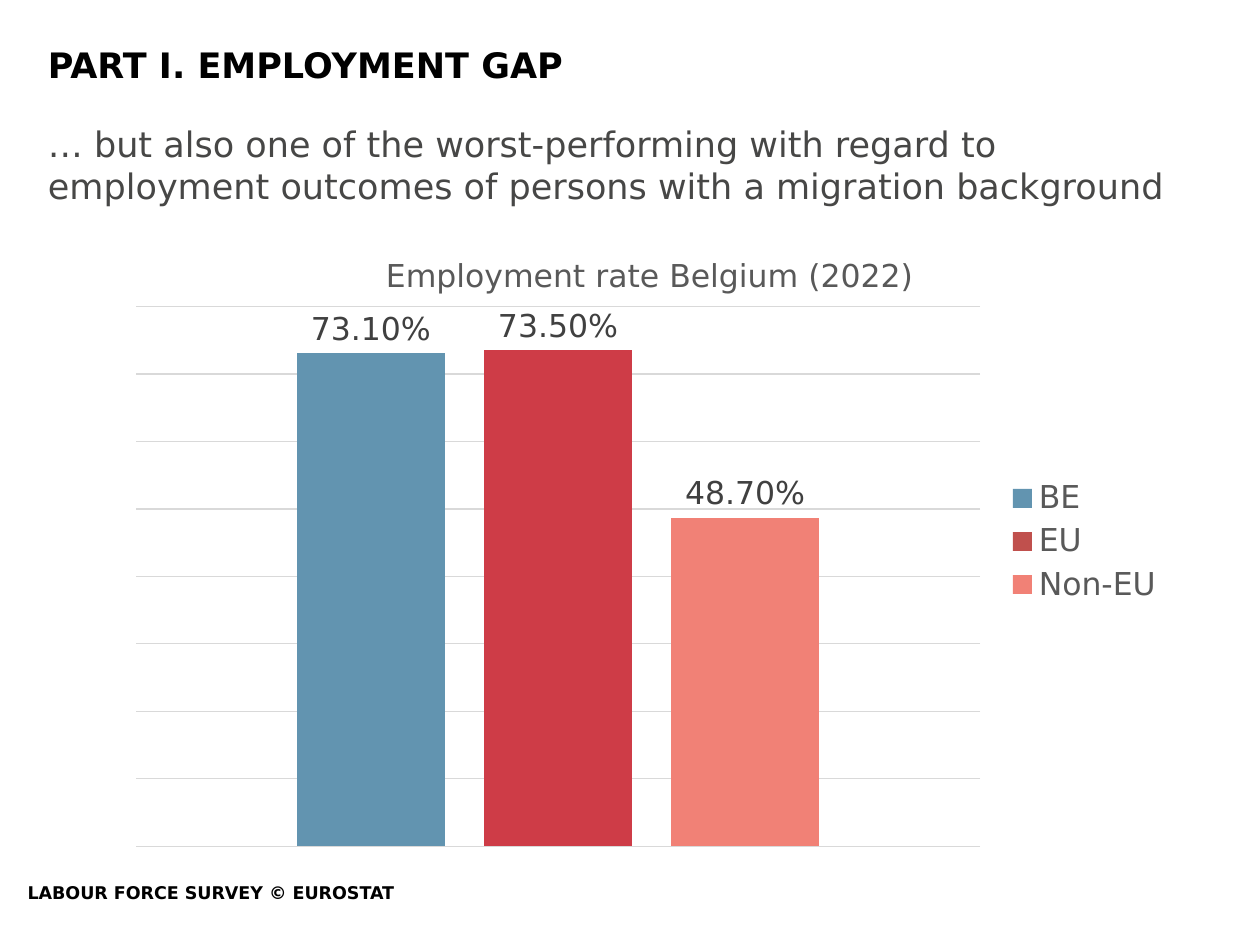
from dataclasses import dataclass

from lxml.etree import SubElement
from pptx import Presentation
from pptx.chart.data import CategoryChartData
from pptx.dml.color import RGBColor
from pptx.enum.chart import XL_CHART_TYPE as ChartType
from pptx.enum.chart import XL_LABEL_POSITION as LabelPosition
from pptx.enum.chart import XL_LEGEND_POSITION as LegendPosition
from pptx.enum.text import MSO_ANCHOR as Anchor
from pptx.enum.text import MSO_AUTO_SIZE as AutoSize
from pptx.enum.text import PP_ALIGN as Align
from pptx.oxml import parse_xml
from pptx.oxml.ns import nsdecls, qn
from pptx.util import Inches, Pt

WIDTH, HEIGHT = Inches(10), Inches(7.5)


@dataclass(frozen=True)
class Theme:
    font: str = "DejaVu Sans"
    heading_size: int = 20
    chart_size: int = 18
    source_size: int = 10
    black: str = "000000"
    body: str = "474746"
    chart_text: str = "595959"
    label: str = "404040"
    grid: str = "D9D9D9"


THEME = Theme()

# Series name, rate, series colour, bar colour
RATES = [
    ("BE", 0.731, "6294B0", "6294B0"),
    ("EU", 0.735, "C0504D", "CE3C47"),
    ("Non-EU", 0.487, "F18176", "F18176"),
]


def share(left, top, width, height):
    """Turn shares of the slide's size into lengths."""
    return (int(WIDTH * left), int(HEIGHT * top),
            int(WIDTH * width), int(HEIGHT * height))


def place(shape, box):
    shape.left, shape.top, shape.width, shape.height = box


def style_font(font, size, color, bold=False):
    font.name = THEME.font
    font.size = Pt(size)
    font.bold = bold
    font.color.rgb = RGBColor.from_string(color)


def write_text(shape, text, size=THEME.heading_size, color=THEME.black,
               bold=False, anchor=Anchor.TOP):
    frame = shape.text_frame
    frame.text = text
    frame.word_wrap = True
    frame.auto_size = AutoSize.NONE
    frame.vertical_anchor = anchor
    paragraph = frame.paragraphs[0]
    paragraph.alignment = Align.LEFT
    paragraph.space_before = Pt(0)
    properties = paragraph._p.get_or_add_pPr()
    properties.set("marL", "0")
    properties.set("indent", "0")
    SubElement(properties, qn("a:buNone"))
    style_font(paragraph.runs[0].font, size, color, bold)


def set_layout(parent, **values):
    """Give a chart part a fixed place, in shares of the chart's size."""
    for old in parent.findall(qn("c:layout")):
        parent.remove(old)
    layout = parse_xml(f"<c:layout {nsdecls('c')}><c:manualLayout/></c:layout>")
    for name, value in values.items():
        SubElement(layout[0], qn(f"c:{name}")).set("val", str(value))
    text = parent.find(qn("c:tx"))
    if text is None:
        parent.insert(0, layout)
    else:
        text.addnext(layout)


def style_series(series, color, bar_color):
    series.format.fill.solid()
    series.format.fill.fore_color.rgb = RGBColor.from_string(color)
    if bar_color != color:
        fill = series.points[0].format.fill
        fill.solid()
        fill.fore_color.rgb = RGBColor.from_string(bar_color)
    labels = series.data_labels
    labels.show_value = True
    labels.position = LabelPosition.OUTSIDE_END
    labels.number_format = "0.00%"
    labels.number_format_is_linked = False
    style_font(labels.font, THEME.chart_size, THEME.label)


def add_rate_chart(slide, title, box):
    data = CategoryChartData(number_format="0.00%")
    data.categories = ["1"]
    for name, rate, *_ in RATES:
        data.add_series(name, [rate])
    chart = slide.shapes.add_chart(ChartType.COLUMN_CLUSTERED, *box, data).chart
    style_font(chart.font, THEME.chart_size, THEME.chart_text)

    # Title
    chart.has_title = True
    chart.chart_title.include_in_layout = False
    chart.chart_title.text_frame.text = title
    run = chart.chart_title.text_frame.paragraphs[0].runs[0]
    style_font(run.font, THEME.chart_size, THEME.chart_text)
    set_layout(chart.chart_title._element, xMode="edge", yMode="edge",
               x=0.25, y=0.04)

    # Legend
    chart.has_legend = True
    chart.legend.position = LegendPosition.RIGHT
    chart.legend.include_in_layout = False
    style_font(chart.legend.font, THEME.chart_size, THEME.chart_text)

    # Hidden axes, visible gridlines
    chart.category_axis.visible = False
    value_axis = chart.value_axis
    value_axis.visible = False
    value_axis.minimum_scale, value_axis.maximum_scale = 0, 0.8
    value_axis.major_unit = 0.1
    value_axis.has_major_gridlines = True
    line = value_axis.major_gridlines.format.line
    line.width = Pt(0.75)
    line.color.rgb = RGBColor.from_string(THEME.grid)

    # Bars
    plot = chart.plots[0]
    plot.vary_by_categories = False
    plot.gap_width, plot.overlap = 219, -27
    for series, (_, _, color, bar_color) in zip(plot.series, RATES):
        style_series(series, color, bar_color)
    set_layout(chart._chartSpace.chart.plotArea, layoutTarget="inner",
               xMode="edge", yMode="edge", x=0.02, y=0.13, w=0.795, h=0.85)


def main():
    presentation = Presentation()
    presentation.slide_width, presentation.slide_height = WIDTH, HEIGHT
    slide = presentation.slides.add_slide(presentation.slide_layouts[1])

    # Heading and statement
    title, body = slide.shapes.title, slide.placeholders[1]
    place(title, share(0.028, 0.028, 0.945, 0.08))
    write_text(title, "PART I. EMPLOYMENT GAP", bold=True, anchor=Anchor.MIDDLE)
    place(body, share(0.028, 0.123, 0.945, 0.735))
    write_text(body, "… but also one of the worst-performing with regard to "
               "employment outcomes of persons with a migration background",
               color=THEME.body)

    # Source line
    source = slide.shapes.add_textbox(*share(0.012, 0.927, 0.372, 0.045))
    write_text(source, "LABOUR FORCE SURVEY\u00a0© EUROSTAT",
               size=THEME.source_size, bold=True)

    # Employment rates
    add_rate_chart(slide, "Employment rate Belgium (2022)",
                   share(0.091, 0.237, 0.843, 0.672))
    presentation.save("out.pptx")


if __name__ == "__main__":
    main()
